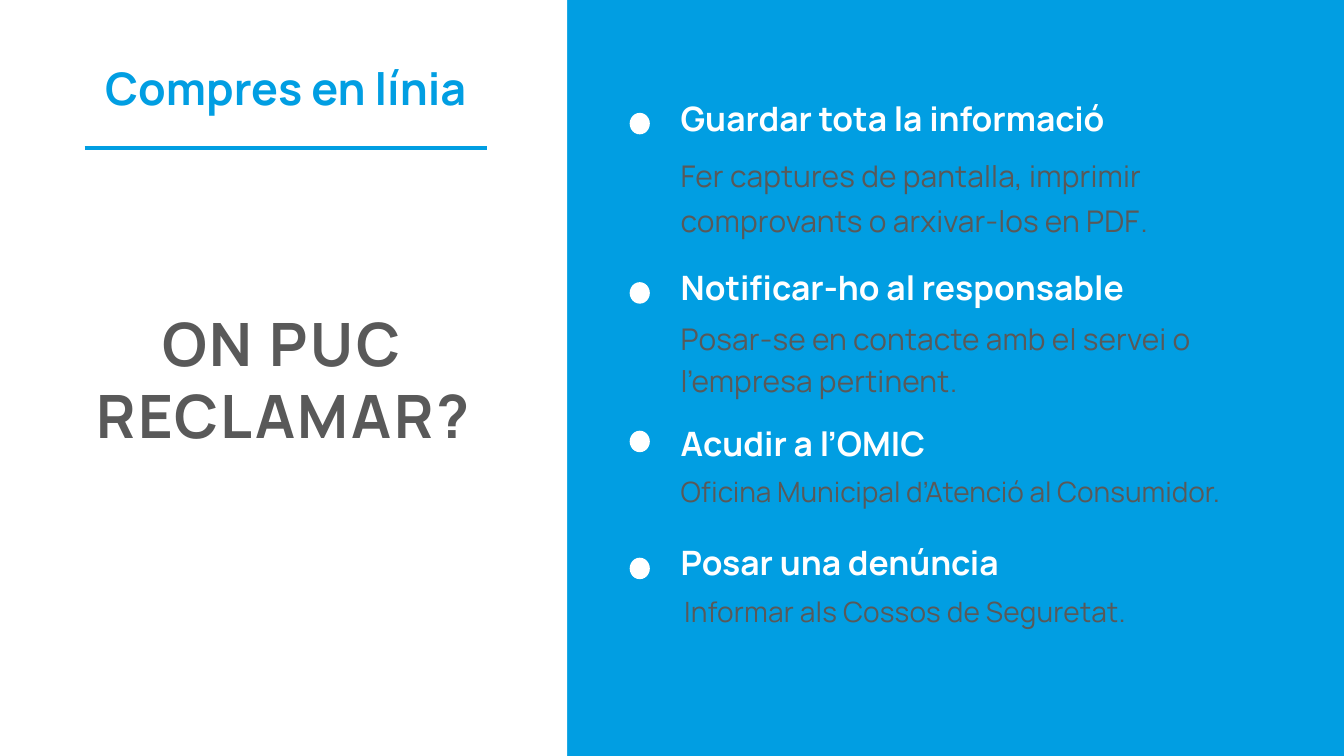
from pptx import Presentation, util as u
from pptx.dml.color import RGBColor
from pptx.enum import shapes, text
from pptx.oxml import ns
from lxml import etree

# Grid: 100 columns across the 16:9 slide, rows of the same size
COLS, ROWS = 100, 56.25
CELL = u.Inches(0.1)
BLUE, WHITE, GREY, DARK = "019EE2", "FFFFFF", "595959", "231F1D"
FONT = "Manrope"
TEXT_COL, DOT_COL = 50.65, 46.85

# Title row, dot row, body row, body column, body width, line pitch, spacing, runs
STEPS = [
    ("Guardar tota la informació", 6.9, 8.4, 11.1, TEXT_COL, 40.6, 24, 0.1,
     [("Fer captures de pantalla, imprimir comprovants o arxivar-los en PDF", 16), (".", 15)]),
    ("Notificar-ho al responsable", 19.45, 21, 23.4, TEXT_COL, 40.6, 22.6, 0.1,
     [("Posar-se en contacte amb el servei o l’empresa pertinent", 16), (".", 15)]),
    ("Acudir a l’OMIC", 31.05, 32.05, 34.7, TEXT_COL, 45, 22.6, 0,
     [("Oficina Municipal d’Atenció al Consumidor.", 15)]),
    ("Posar una denúncia", 39.9, 41.5, 43.6, 50.9, 40.6, 22.6, 0.1,
     [("Informar als Cossos de Seguretat.", 15)]),
]


def color(value):
    return RGBColor.from_string(value)


def grid(*cells):
    return [round(c * CELL) for c in cells]


def add_block(s, kind, box, fill):
    sp = s.shapes.add_shape(kind, *grid(*box))
    sp.shadow.inherit = False
    sp.fill.solid()
    sp.fill.fore_color.rgb = color(fill)
    sp.line.fill.background()


def add_rule(s, x1, x2, y, line_color, width):
    line = s.shapes.add_connector(shapes.MSO_CONNECTOR.STRAIGHT, *grid(x1, y, x2, y))
    line.line.color.rgb = color(line_color)
    line.line.width = u.Pt(width)
    etree.SubElement(line._element.spPr, ns.qn("a:effectLst"))


def add_text(s, box, runs, font_color, bold=False, align=None, pitch=None, spacing=0):
    tf = s.shapes.add_textbox(*grid(*box)).text_frame
    tf.word_wrap = True
    tf.margin_left = tf.margin_right = tf.margin_top = tf.margin_bottom = 0
    p = tf.paragraphs[0]
    p.alignment = align
    if pitch:
        p.line_spacing = u.Pt(pitch)
    for words, size in runs:
        r = p.add_run()
        r.text = words
        r.font.name, r.font.size, r.font.bold = FONT, u.Pt(size), bold
        r.font.color.rgb = color(font_color)
        if spacing:
            r.font._element.set("spc", str(round(spacing * 100)))


def add_step(s, title, title_row, dot_row, body_row, body_col, width, pitch, spacing, body):
    add_block(s, shapes.MSO_SHAPE.OVAL, (DOT_COL, dot_row, 1.5, 1.6), WHITE)
    add_text(s, (TEXT_COL, title_row, 40.6, 3.4), [(title, 18)], WHITE, bold=True, pitch=24.6)
    add_text(s, (body_col, body_row, width, 3.2 * len(body)), body, GREY,
             pitch=pitch, spacing=spacing)


def main():
    prs = Presentation()
    prs.slide_width, prs.slide_height = grid(COLS, ROWS)
    s = prs.slides.add_slide(prs.slide_layouts[6])
    s.background.fill.solid()
    s.background.fill.fore_color.rgb = color(DARK)

    # Two panels
    split = 42.2
    add_block(s, shapes.MSO_SHAPE.RECTANGLE, (split, 0, COLS - split, ROWS), BLUE)
    add_block(s, shapes.MSO_SHAPE.RECTANGLE, (0, 0, split, ROWS), WHITE)

    # Topic and question
    center = text.PP_ALIGN.CENTER
    add_text(s, (-3.35, 4.5, 49.2, 4), [("Compres en línia", 24)], BLUE, bold=True, align=center)
    add_rule(s, 6.3, 36.25, 11, BLUE, 2.25)
    add_text(s, (5.3, 22.85, 31.5, 10.8), [("ON PUC RECLAMAR?", 32)], GREY,
             bold=True, align=center, spacing=1.4)

    # Steps to follow
    for step in STEPS:
        add_step(s, *step)

    prs.save("out.pptx")


if __name__ == "__main__":
    main()
